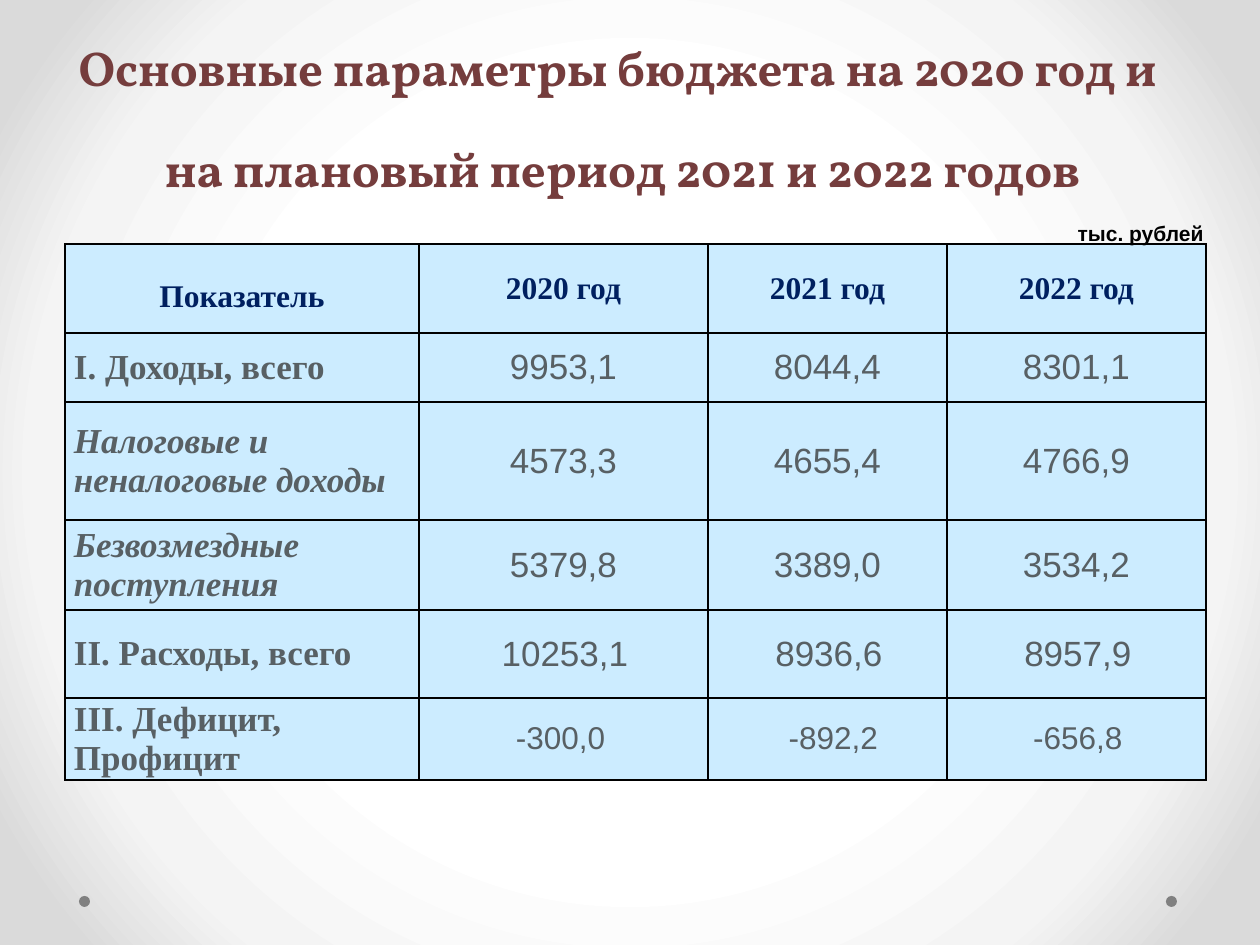
from dataclasses import dataclass

from lxml import etree
from pptx import Presentation
from pptx.dml.color import RGBColor
from pptx.enum.shapes import MSO_SHAPE
from pptx.enum.text import MSO_ANCHOR, MSO_AUTO_SIZE, PP_ALIGN
from pptx.oxml import parse_xml
from pptx.oxml.ns import qn
from pptx.util import Emu, Pt

OVAL = MSO_SHAPE.OVAL
MIDDLE, BOTTOM = MSO_ANCHOR.MIDDLE, MSO_ANCHOR.BOTTOM
LEFT, CENTER, RIGHT = PP_ALIGN.LEFT, PP_ALIGN.CENTER, PP_ALIGN.RIGHT
NO_FIT = MSO_AUTO_SIZE.NONE

PX_PER_INCH = 126
SERIF, SANS = "Times New Roman", "Arial"
NAVY, GRAY, SKY, BLACK = "002060", "586064", "CCECFF", "000000"
DRAWING_NS = "http://schemas.openxmlformats.org/drawingml/2006/main"

COLUMN_WIDTHS = [354, 289, 239, 259]
HEADINGS = ["Показатель", "2020 год", "2021 год", "2022 год"]
HEADING_HEIGHT = 89
GRADIENT_STOPS = [(50, "FFFFFF"), (76, "F4F4F4"), (92, "DADADA")]


@dataclass
class Style:
    font: str
    size: int
    color: str
    bold: bool = False
    italic: bool = False
    align: PP_ALIGN = CENTER
    indent: int = 0
    spacing: float = 1.0


@dataclass
class BudgetRow:
    height: int
    label: str
    values: list[str]
    italic: bool = False
    indent: int = -9
    size: int = 20


ROWS = [
    BudgetRow(69, "I. Доходы, всего", ["9953,1", "8044,4", "8301,1"]),
    BudgetRow(118, "Налоговые и неналоговые доходы",
              ["4573,3", "4655,4", "4766,9"], italic=True),
    BudgetRow(90, "Безвозмездные поступления",
              ["5379,8", "3389,0", "3534,2"], italic=True),
    BudgetRow(88, "II. Расходы, всего",
              ["10253,1", "8936,6", "8957,9"], indent=3),
    BudgetRow(82, "III. Дефицит,\nПрофицит",
              ["-300,0 ", " -892,2", "-656,8"], indent=3, size=18),
]


def px(n: int) -> Emu:
    return Emu(round(n * 914400 / PX_PER_INCH))


def rgb(color: str) -> RGBColor:
    return RGBColor.from_string(color)


def write(tf, text: str, style: Style) -> None:
    tf.text = text
    for p in tf.paragraphs:
        p.alignment = style.align
        if style.spacing != 1.0:
            p.line_spacing = style.spacing
        if style.indent:
            pPr = p._p.get_or_add_pPr()
            pPr.set("marL", "0")
            pPr.set("indent", str(px(style.indent)))
        for r in p.runs:
            r.font.name = style.font
            r.font.size = Pt(style.size)
            r.font.bold = style.bold
            r.font.italic = style.italic
            r.font.color.rgb = rgb(style.color)


def add_background(s) -> None:
    s.background.fill.solid()
    stops = "".join(f'<a:gs pos="{pos * 1000}"><a:srgbClr val="{color}"/></a:gs>'
                    for pos, color in GRADIENT_STOPS)
    gradient = parse_xml(
        f'<a:gradFill xmlns:a="{DRAWING_NS}" rotWithShape="1"><a:gsLst>{stops}</a:gsLst>'
        '<a:path path="circle"><a:fillToRect l="50000" t="50000" r="50000" b="50000"/>'
        '</a:path></a:gradFill>')
    bg = s._element.find(".//" + qn("p:bgPr"))
    bg.replace(bg[0], gradient)


def add_dot(s, x: int, y: int) -> None:
    dot = s.shapes.add_shape(OVAL, px(x), px(y), px(11), px(11))
    dot.shadow.inherit = False
    dot.fill.solid()
    dot.fill.fore_color.rgb = rgb("808080")
    dot.line.fill.background()


def add_borders(cell) -> None:
    tcPr = cell._tc.get_or_add_tcPr()
    for side in ("lnL", "lnR", "lnT", "lnB"):
        ln = etree.SubElement(tcPr, qn(f"a:{side}"), w=str(Pt(1)))
        fill = etree.SubElement(ln, qn("a:solidFill"))
        etree.SubElement(fill, qn("a:srgbClr"), val=BLACK)


def fill_cell(cell, text: str, style: Style) -> None:
    add_borders(cell)
    cell.fill.solid()
    cell.fill.fore_color.rgb = rgb(SKY)
    cell.vertical_anchor = MIDDLE
    cell.margin_left = cell.margin_right = px(9)
    cell.margin_top = cell.margin_bottom = 0
    write(cell.text_frame, text, style)


def add_budget_table(s, x: int, y: int) -> None:
    heights = [HEADING_HEIGHT] + [row.height for row in ROWS]
    table = s.shapes.add_table(len(heights), len(COLUMN_WIDTHS), px(x), px(y),
                               px(sum(COLUMN_WIDTHS)), px(sum(heights))).table
    table.first_row = table.horz_banding = False
    for column, width in zip(table.columns, COLUMN_WIDTHS):
        column.width = px(width)
    for line, height in zip(table.rows, heights):
        line.height = px(height)

    # Heading row: the first heading is indented and spaced wider
    for c, heading in enumerate(HEADINGS):
        style = Style(SERIF, 18, NAVY, bold=True)
        if c == 0:
            style.indent, style.spacing = -9, 1.5
        fill_cell(table.cell(0, c), heading, style)

    # Budget rows
    for i, row in enumerate(ROWS, start=1):
        label_style = Style(SERIF, 20, GRAY, bold=True, italic=row.italic, align=LEFT)
        value_style = Style(SANS, row.size, GRAY, indent=row.indent)
        fill_cell(table.cell(i, 0), row.label, label_style)
        for c, value in enumerate(row.values, start=1):
            fill_cell(table.cell(i, c), value, value_style)


def main() -> None:
    prs = Presentation()
    prs.slide_width, prs.slide_height = px(1260), px(945)
    s = prs.slides.add_slide(prs.slide_layouts[5])

    # Background and corner dots
    add_background(s)
    for x in (1166, 79):
        add_dot(s, x, 896)

    # Title
    title = s.shapes.title
    title.left, title.top, title.width, title.height = px(0), px(49), px(1245), px(155)
    tf = title.text_frame
    tf.auto_size = NO_FIT
    tf.vertical_anchor = BOTTOM
    write(tf, "Основные параметры бюджета на 2020 год и \vна плановый период 2021 и 2022 годов",
          Style("Vollkorn", 28, "753D3D", bold=True))
    tf.paragraphs[0].line_spacing = Pt(58)

    # Table with its unit of measure
    add_budget_table(s, 65, 244)
    unit = s.shapes.add_textbox(px(1037), px(214), px(179), px(38))
    unit.text_frame.word_wrap = True
    write(unit.text_frame, "тыс. рублей", Style(SANS, 12, BLACK, bold=True, align=RIGHT))

    prs.save("out.pptx")


if __name__ == "__main__":
    main()
